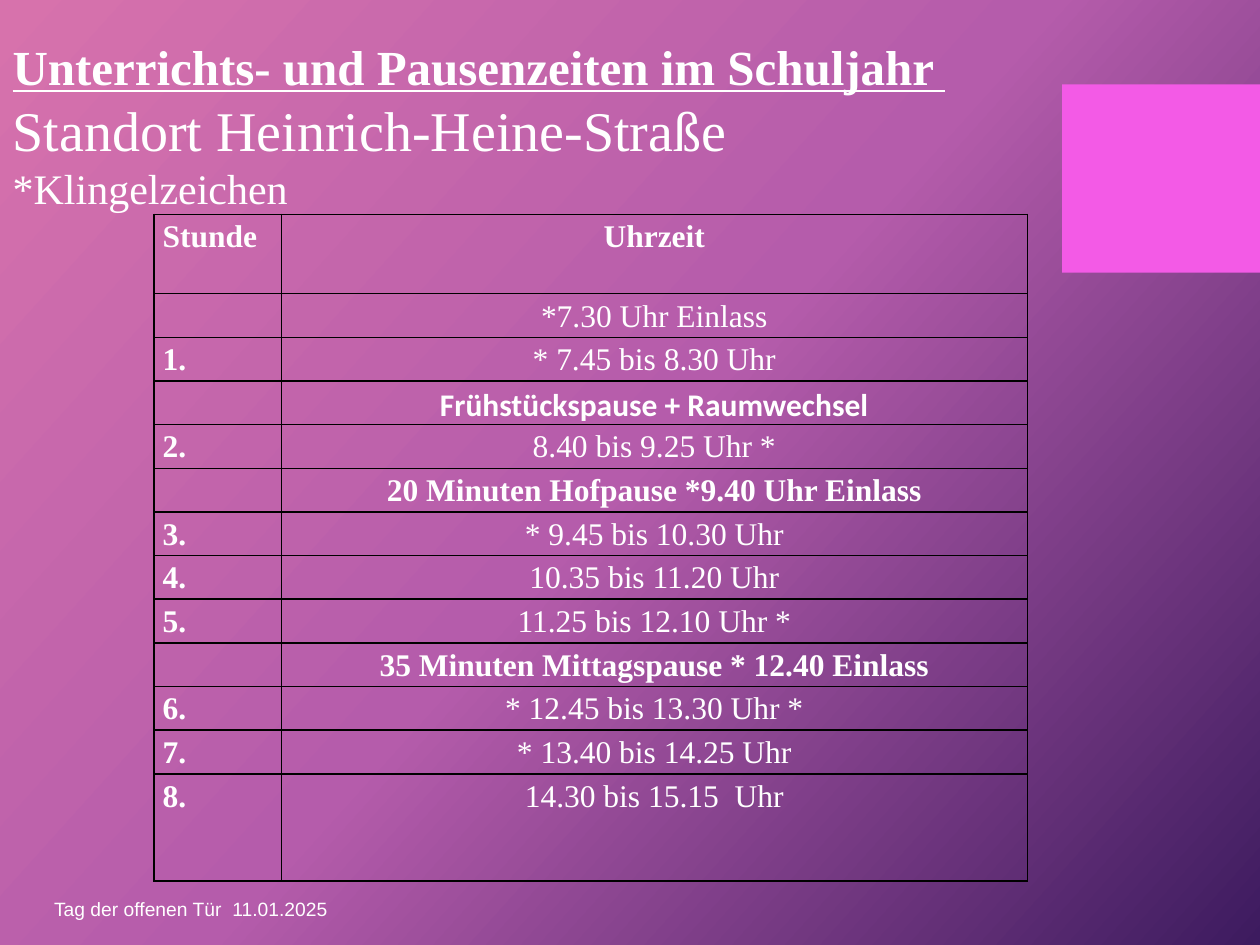
import copy

import pptx
import pptx.dml.color
import pptx.enum.shapes
import pptx.enum.text
import pptx.oxml
import pptx.oxml.ns
import pptx.util
from pptx.util import Cm

ANCHOR = pptx.enum.text.MSO_ANCHOR
ALIGN = pptx.enum.text.PP_ALIGN

LESSONS = [
    ("Stunde", "Uhrzeit", True),
    ("", "*7.30 Uhr Einlass", False),
    ("1.", "* 7.45 bis 8.30 Uhr", False),
    ("", "Frühstückspause + Raumwechsel", True),
    ("2.", "8.40 bis 9.25 Uhr *", False),
    ("", "20 Minuten Hofpause *9.40 Uhr Einlass", True),
    ("3.", "* 9.45 bis 10.30 Uhr", False),
    ("4.", "10.35 bis 11.20 Uhr", False),
    ("5.", "11.25 bis 12.10 Uhr *", False),
    ("", "35 Minuten Mittagspause * 12.40 Einlass", True),
    ("6.", "* 12.45 bis 13.30 Uhr *", False),
    ("7.", "* 13.40 bis 14.25 Uhr", False),
    ("8.", "14.30 bis 15.15  Uhr", False),
]


def color(value):
    return pptx.dml.color.RGBColor.from_string(value)


class SlideBuilder:
    serif = "Times New Roman"
    sans = "Arial"
    text_color = "FFFFFF"
    border_color = "000000"

    def __init__(self, slide):
        self.slide = slide

    def background(self, stops, angle):
        fill = self.slide.background.fill
        fill.gradient()
        fill.gradient_angle = 360 - angle
        stop_list = self.slide.element.find(".//" + pptx.oxml.ns.qn("a:gsLst"))
        while len(stop_list) < len(stops):
            stop_list.append(copy.deepcopy(stop_list[0]))
        for stop, (position, value) in zip(fill.gradient_stops, stops):
            stop.position = position
            stop.color.rgb = color(value)

    def run(self, paragraph, text, size, font=None, bold=False, underline=False):
        run = paragraph.add_run()
        run.text = text
        run.font.name = font or self.serif
        run.font.size = pptx.util.Pt(size)
        run.font.bold = bold
        run.font.underline = underline
        run.font.color.rgb = color(self.text_color)

    def rectangle(self, left, top, width, height, fill):
        shape = self.slide.shapes.add_shape(
            pptx.enum.shapes.MSO_SHAPE.RECTANGLE, Cm(left), Cm(top), Cm(width), Cm(height))
        shape.shadow.inherit = False
        shape.fill.solid()
        shape.fill.fore_color.rgb = color(fill)
        shape.line.fill.background()

    def title(self, left, top, width, height, lines):
        title = self.slide.shapes.title
        title.left, title.top, title.width, title.height = Cm(left), Cm(top), Cm(width), Cm(height)
        frame = title.text_frame
        frame.word_wrap = True
        frame.auto_size = pptx.enum.text.MSO_AUTO_SIZE.NONE
        frame.vertical_anchor = ANCHOR.BOTTOM
        for index, (text, size, strong) in enumerate(lines):
            paragraph = frame.add_paragraph() if index else frame.paragraphs[0]
            paragraph.alignment = ALIGN.LEFT
            self.run(paragraph, text, size, bold=strong, underline=strong)

    def text(self, left, top, width, height, text, size):
        box = self.slide.shapes.add_textbox(Cm(left), Cm(top), Cm(width), Cm(height))
        frame = box.text_frame
        frame.word_wrap = True
        frame.vertical_anchor = ANCHOR.MIDDLE
        self.run(frame.paragraphs[0], text, size, font=self.sans)

    def borders(self, cell):
        properties = cell._tc.get_or_add_tcPr()
        for side in ("lnL", "lnR", "lnT", "lnB"):
            properties.append(pptx.oxml.parse_xml(
                f'<a:{side} {pptx.oxml.ns.nsdecls("a")} w="12700"><a:solidFill>'
                f'<a:srgbClr val="{self.border_color}"/></a:solidFill></a:{side}>'))

    def cell(self, cell, text, alignment, bold, font):
        cell.margin_left = cell.margin_right = Cm(0.18)
        cell.margin_top = cell.margin_bottom = 0
        self.borders(cell)
        cell.fill.background()
        paragraph = cell.text_frame.paragraphs[0]
        paragraph.alignment = alignment
        paragraph.line_spacing = 1.15
        if text:
            self.run(paragraph, text, 18, font=font, bold=bold)

    def timetable(self, left, top, widths, heights, lessons):
        table = self.slide.shapes.add_table(
            len(lessons), len(widths), Cm(left), Cm(top),
            Cm(sum(widths)), Cm(sum(heights))).table
        table.first_row = table.horz_banding = False
        for column, width in zip(table.columns, widths):
            column.width = Cm(width)
        for row, height, (lesson, time, bold) in zip(table.rows, heights, lessons):
            row.height = Cm(height)
            font = "Calibri" if time.startswith("Frühstück") else self.serif
            self.cell(row.cells[0], lesson, ALIGN.LEFT, True, self.serif)
            self.cell(row.cells[1], time, ALIGN.CENTER, bold, font)


def main():
    presentation = pptx.Presentation()
    presentation.slide_width = Cm(25.4)
    presentation.slide_height = Cm(19.05)
    builder = SlideBuilder(presentation.slides.add_slide(presentation.slide_layouts[5]))
    builder.background([(0, "D772AC"), (0.5, "B55CAB"), (1, "3D1B5F")], 42)
    builder.rectangle(21.41, 1.7, 3.99, 3.8, "F35AE6")
    builder.text(0.84, 17.81, 16.87, 1.02, "Tag der offenen Tür  11.01.2025", 11)
    heights = [1.6] + [0.88] * (len(LESSONS) - 2) + [2.16]
    builder.timetable(3.1, 4.32, [2.57, 15.04], heights, LESSONS)
    builder.title(0, 0.6, 23.6, 3.82, [
        ("Unterrichts- und Pausenzeiten im Schuljahr ", 28, True),
        ("Standort Heinrich-Heine-Straße", 32, False),
        ("*Klingelzeichen", 24, False),
    ])
    presentation.save("out.pptx")


if __name__ == "__main__":
    main()
